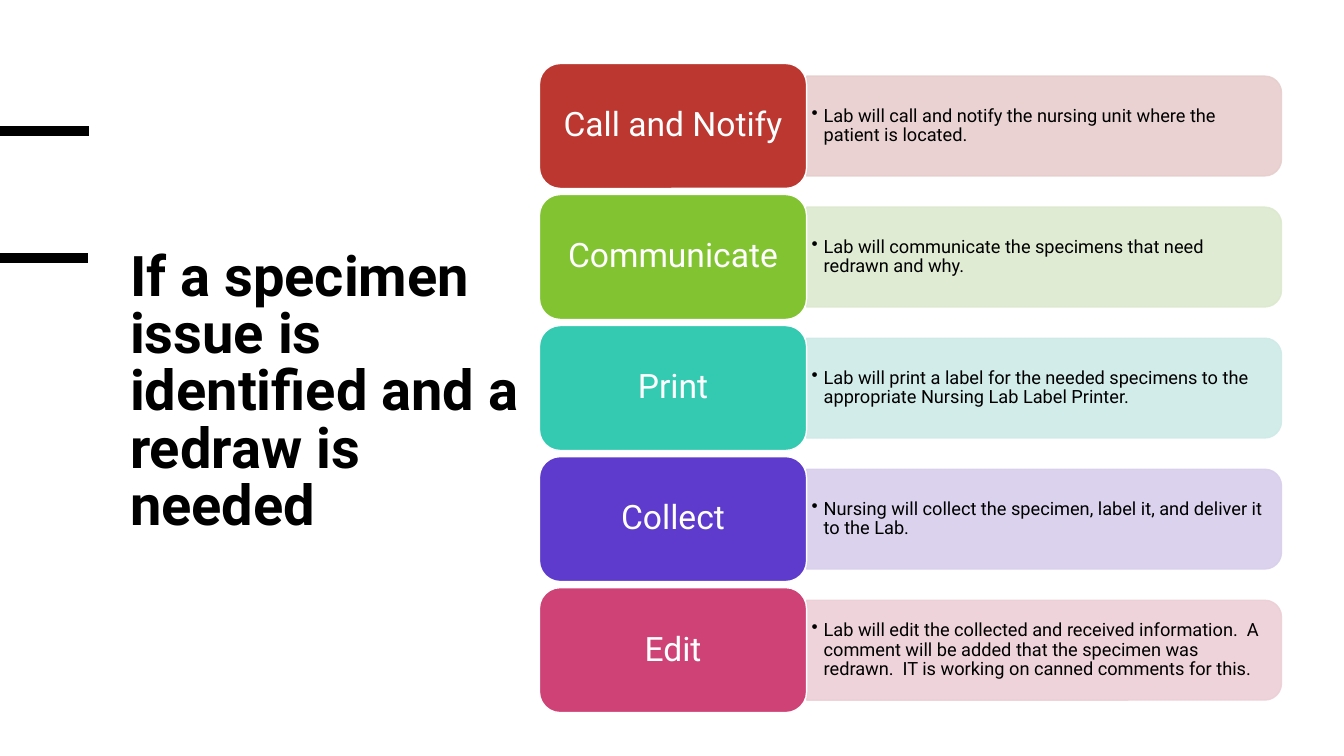
"""Build a slide listing the five steps of a specimen redraw."""
import pptx
import pptx.dml.color
import pptx.enum.shapes
import pptx.enum.text
import pptx.oxml
import pptx.oxml.ns
import pptx.util
from pptx.util import Inches

RGBColor = pptx.dml.color.RGBColor
SHAPE = pptx.enum.shapes.MSO_SHAPE
ALIGN = pptx.enum.text.PP_ALIGN
ANCHOR = pptx.enum.text.MSO_ANCHOR

FONT = "Roboto"
BLACK = RGBColor(0x00, 0x00, 0x00)
WHITE = RGBColor(0xFF, 0xFF, 0xFF)
RED = RGBColor(0xBC, 0x37, 0x30)
PALE_RED = RGBColor(0xE7, 0xCE, 0xCD)
GREEN = RGBColor(0x82, 0xC3, 0x32)
PALE_GREEN = RGBColor(0xDC, 0xE9, 0xCE)
TEAL = RGBColor(0x34, 0xCA, 0xB2)
PALE_TEAL = RGBColor(0xCE, 0xEA, 0xE7)
PURPLE = RGBColor(0x5E, 0x3B, 0xCC)
PALE_PURPLE = RGBColor(0xD8, 0xCF, 0xEC)
PINK = RGBColor(0xCE, 0x42, 0x75)
PALE_PINK = RGBColor(0xED, 0xCF, 0xD6)

TITLE = "If a specimen issue is identified and a redraw is needed"
STEPS = [
    ("Call and Notify", RED, PALE_RED,
     "Lab will call and notify the nursing unit where the patient is located."),
    ("Communicate", GREEN, PALE_GREEN,
     "Lab will communicate the specimens that need redrawn and why."),
    ("Print", TEAL, PALE_TEAL,
     "Lab will print a label for the needed specimens to the appropriate "
     "Nursing Lab Label Printer."),
    ("Collect", PURPLE, PALE_PURPLE,
     "Nursing will collect the specimen, label it, and deliver it to the Lab."),
    ("Edit", PINK, PALE_PINK,
     "Lab will edit the collected and received information.  A comment will be "
     "added that the specimen was redrawn.  IT is working on canned comments "
     "for this."),
]
STEP_TOP, STEP_PITCH = 0.63, 1.3
LABEL_LEFT, LABEL_W, LABEL_H = 5.35, 2.65, 1.24
PANEL_LEFT, PANEL_W, PANEL_H = 8, 4.71, 0.99


def set_text(sp, text, size, color, align, anchor, spacing, bold=False):
    """Write one formatted paragraph into a shape and return it."""
    tf = sp.text_frame
    tf.text = text
    tf.word_wrap = True
    tf.auto_size = pptx.enum.text.MSO_AUTO_SIZE.NONE
    tf.vertical_anchor = anchor
    p = tf.paragraphs[0]
    p.alignment = align
    p.line_spacing = spacing
    font = p.runs[0].font
    font.name, font.size, font.bold = FONT, pptx.util.Pt(size), bold
    font.color.rgb = color
    return p


def add_bullet(p):
    """Give a paragraph a hanging round bullet."""
    pPr = p._p.get_or_add_pPr()
    pPr.set("marL", str(Inches(0.12)))
    pPr.set("indent", str(Inches(-0.12)))
    bullet = pptx.oxml.parse_xml(
        f'<a:buChar {pptx.oxml.ns.nsdecls("a")} char="•"/>')
    pPr.append(bullet)


def add_box(s, kind, left, top, width, height, fill, line):
    """Add a filled and outlined preset shape."""
    sp = s.shapes.add_shape(kind, Inches(left), Inches(top),
                            Inches(width), Inches(height))
    sp.shadow.inherit = False
    sp.fill.solid()
    sp.fill.fore_color.rgb = fill
    sp.line.color.rgb = line
    sp.line.width = pptx.util.Pt(1)
    return sp


def add_panel(s, middle, color, text):
    """Add a translucent panel rounded on the right, with its bulleted text."""
    center = PANEL_LEFT + PANEL_W / 2
    sp = add_box(s, SHAPE.ROUND_2_SAME_RECTANGLE, center - PANEL_H / 2,
                 middle - PANEL_W / 2, PANEL_H, PANEL_W, color, color)
    sp.rotation = 90
    for clr in sp._element.spPr.iter(pptx.oxml.ns.qn("a:srgbClr")):
        clr.append(pptx.oxml.parse_xml(
            f'<a:alpha {pptx.oxml.ns.nsdecls("a")} val="90000"/>'))
    box = s.shapes.add_textbox(Inches(PANEL_LEFT), Inches(middle - 0.445),
                               Inches(4.66), Inches(0.89))
    tf = box.text_frame
    tf.margin_left = tf.margin_right = Inches(0.05)
    tf.margin_top = tf.margin_bottom = Inches(0.03)
    add_bullet(set_text(box, text, 13, BLACK, ALIGN.LEFT, ANCHOR.MIDDLE, 0.9))


def add_step(s, top, label, color, pale, text):
    """Add one step: its panel and the label block beside it."""
    add_panel(s, top + LABEL_H / 2, pale, text)
    sp = add_box(s, SHAPE.ROUNDED_RECTANGLE, LABEL_LEFT, top,
                 LABEL_W, LABEL_H, color, WHITE)
    set_text(sp, label, 24, WHITE, ALIGN.CENTER, ANCHOR.MIDDLE, 0.9)


def add_rule(s, left, right, y):
    """Add a thick black horizontal line."""
    line = s.shapes.add_connector(
        pptx.enum.shapes.MSO_CONNECTOR.STRAIGHT,
        Inches(left), Inches(y), Inches(right), Inches(y))
    line.line.color.rgb = BLACK
    line.line.width = pptx.util.Pt(6.75)
    line._element.spPr.append(pptx.oxml.parse_xml(
        f'<a:effectLst {pptx.oxml.ns.nsdecls("a")}/>'))


def add_title(s):
    """Place and format the title placeholder."""
    sp = s.shapes.title
    sp.left, sp.top = Inches(1.19), Inches(2.44)
    sp.width, sp.height = Inches(4.16), Inches(3.67)
    set_text(sp, TITLE, 40, BLACK, ALIGN.LEFT, ANCHOR.TOP, 0.85, bold=True)


def main():
    """Build and save the slide."""
    prs = pptx.Presentation()
    prs.slide_width, prs.slide_height = Inches(13.33), Inches(7.5)
    s = prs.slides.add_slide(prs.slide_layouts[5])
    add_title(s)
    add_rule(s, 0, 0.88, 1.3)
    add_rule(s, -0.01, 0.87, 2.56)
    for i, step in enumerate(STEPS):
        add_step(s, STEP_TOP + i * STEP_PITCH, *step)
    prs.save("out.pptx")


if __name__ == "__main__":
    main()
